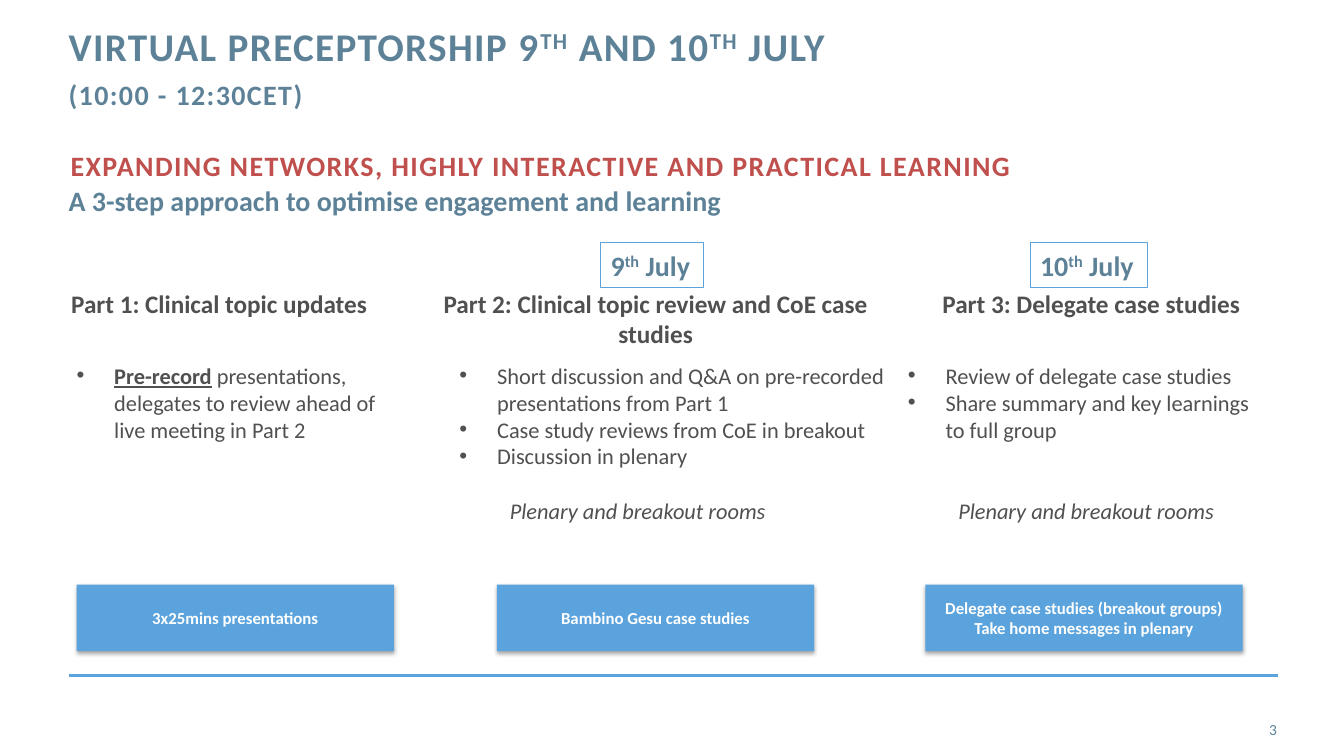
from dataclasses import dataclass

from lxml.etree import SubElement
from pptx import Presentation
from pptx.dml.color import RGBColor
from pptx.enum.shapes import MSO_CONNECTOR, MSO_SHAPE
from pptx.enum.text import MSO_ANCHOR, MSO_AUTO_SIZE, PP_ALIGN
from pptx.oxml.ns import qn
from pptx.util import Cm, Pt


@dataclass(frozen=True)
class Theme:
    font: str = "Calibri"
    slate: str = "5D8298"
    red: str = "C0504D"
    blue: str = "5BA3DD"
    grey: str = "505050"
    white: str = "FFFFFF"
    title: int = 28
    heading: int = 20
    subheading: int = 18
    body: int = 16
    label: int = 12
    number: int = 11


class SlideBuilder:
    def __init__(self, slide, theme):
        self.slide = slide
        self.theme = theme

    def add_run(self, paragraph, text, size, color, bold=False, italic=False,
                underline=False, superscript=False, spaced=False):
        run = paragraph.add_run()
        run.text = text
        font = run.font
        font.name, font.size = self.theme.font, Pt(size)
        font.bold, font.italic, font.underline = bold, italic, underline
        font.color.rgb = RGBColor.from_string(color)
        properties = run._r.get_or_add_rPr()
        if superscript:
            properties.set("baseline", "30000")
        if spaced:
            properties.set("spc", "100")

    def frame(self, shape, inset=True, anchor=MSO_ANCHOR.TOP, wrap=True):
        text_frame = shape.text_frame
        text_frame.word_wrap = wrap
        text_frame.auto_size = MSO_AUTO_SIZE.NONE
        text_frame.vertical_anchor = anchor
        text_frame.margin_left = text_frame.margin_right = Cm(0.25 if inset else 0)
        text_frame.margin_top = text_frame.margin_bottom = Cm(0.13 if inset else 0)
        return text_frame

    def title(self, left, top, width, height, pieces, subtitle):
        shape = self.slide.shapes.title
        shape.left, shape.top = Cm(left), Cm(top)
        shape.width, shape.height = Cm(width), Cm(height)
        paragraph = self.frame(shape, inset=False).paragraphs[0]
        paragraph.alignment = PP_ALIGN.LEFT
        paragraph.line_spacing = Pt(30)
        style = dict(color=self.theme.slate, bold=True, spaced=True)
        for text, superscript in pieces:
            self.add_run(paragraph, text, self.theme.title, superscript=superscript, **style)
        paragraph.add_line_break()
        self.add_run(paragraph, subtitle, self.theme.heading, **style)

    def text(self, left, top, width, height, text, size, color,
             align=PP_ALIGN.LEFT, inset=True, anchor=MSO_ANCHOR.TOP, **style):
        box = self.slide.shapes.add_textbox(Cm(left), Cm(top), Cm(width), Cm(height))
        paragraph = self.frame(box, inset, anchor).paragraphs[0]
        paragraph.alignment = align
        self.add_run(paragraph, text, size, color, **style)

    def indent(self, paragraph, margin, first=0):
        properties = paragraph._p.get_or_add_pPr()
        properties.set("marL", str(Cm(margin)))
        properties.set("indent", str(Cm(first)))
        return properties

    def bullets(self, left, top, width, height, items, note="", gap=0):
        box = self.slide.shapes.add_textbox(Cm(left), Cm(top), Cm(width), Cm(height))
        text_frame = self.frame(box)
        base = dict(size=self.theme.body, color=self.theme.grey)
        for index, runs in enumerate(items):
            paragraph = text_frame.add_paragraph() if index else text_frame.paragraphs[0]
            properties = self.indent(paragraph, 0.95, -0.95)
            SubElement(properties, qn("a:buFont")).set("typeface", "Arial")
            SubElement(properties, qn("a:buChar")).set("char", "•")
            for text, style in runs:
                self.add_run(paragraph, text, **base, **style)
        if note:
            paragraph = text_frame.add_paragraph()
            self.indent(paragraph, 1.27)
            paragraph.space_before = Pt(gap)
            self.add_run(paragraph, note, italic=True, **base)

    def date(self, left, top, width, height, day):
        box = self.slide.shapes.add_textbox(Cm(left), Cm(top), Cm(width), Cm(height))
        box.line.color.rgb = RGBColor.from_string(self.theme.blue)
        box.line.width = Pt(0.75)
        paragraph = self.frame(box, wrap=False).paragraphs[0]
        for text in (day, "th", " July"):
            self.add_run(paragraph, text, self.theme.heading, self.theme.slate,
                         bold=True, superscript=text == "th")

    def button(self, left, top, width, height, lines):
        shape = self.slide.shapes.add_shape(
            MSO_SHAPE.RECTANGLE, Cm(left), Cm(top), Cm(width), Cm(height))
        shape.fill.solid()
        shape.fill.fore_color.rgb = RGBColor.from_string(self.theme.blue)
        shape.line.fill.background()
        shape.shadow.inherit = False
        effects = shape._element.spPr.find(qn("a:effectLst"))
        shadow = SubElement(effects, qn("a:outerShdw"), blurRad=str(Pt(3.1)),
                            dist=str(Pt(1.8)), dir="5400000", rotWithShape="0")
        color = SubElement(shadow, qn("a:srgbClr"), val="000000")
        SubElement(color, qn("a:alpha"), val="35000")
        text_frame = self.frame(shape, anchor=MSO_ANCHOR.MIDDLE)
        for index, line in enumerate(lines):
            paragraph = text_frame.add_paragraph() if index else text_frame.paragraphs[0]
            paragraph.alignment = PP_ALIGN.CENTER
            self.add_run(paragraph, line, self.theme.label, self.theme.white, bold=True)

    def rule(self, left, right, top):
        line = self.slide.shapes.add_connector(
            MSO_CONNECTOR.STRAIGHT, Cm(left), Cm(top), Cm(right), Cm(top))
        line.line.color.rgb = RGBColor.from_string(self.theme.blue)
        line.line.width = Pt(2)
        SubElement(line._element.spPr, qn("a:effectLst"))


def main():
    presentation = Presentation()
    presentation.slide_width, presentation.slide_height = Cm(33.87), Cm(19.05)
    slide = presentation.slides.add_slide(presentation.slide_layouts[5])
    theme = Theme()
    builder = SlideBuilder(slide, theme)

    builder.rule(1.73, 32.21, 17.02)
    builder.title(1.73, 0.69, 28.27, 2.24, [
        ("VIRTUAL PRECEPTORSHIP 9", False), ("TH", True),
        (" AND 10", False), ("TH", True), (" JULY", False),
    ], "(10:00 - 12:30CET)")
    builder.text(1.78, 3.73, 27.38, 0.9,
                 "EXPANDING NETWORKS, HIGHLY INTERACTIVE AND PRACTICAL LEARNING",
                 theme.heading, theme.red, inset=False, bold=True, spaced=True)
    builder.text(1.73, 4.62, 29.77, 0.9,
                 "A 3-step approach to optimise engagement and learning",
                 theme.heading, theme.slate, inset=False, bold=True)

    for left, width, text, align in (
        (0.5, 10.05, "Part 1: Clinical topic updates", PP_ALIGN.CENTER),
        (10.9, 11.25, "Part 2: Clinical topic review and CoE case studies", PP_ALIGN.CENTER),
        (23.5, 10.2, "Part 3: Delegate case studies", PP_ALIGN.LEFT),
    ):
        builder.text(left, 7.14, width, 1.8, text, theme.subheading, theme.grey, align, bold=True)

    plenary = "Plenary and breakout rooms"
    blank_line = 19.5
    for left, width, items, note, blanks in (
        (1.68, 8.74, [[
            ("Pre-record", dict(bold=True, underline=True)),
            (" presentations, delegates to review ahead of live meeting in Part 2", {}),
        ]], "", 0),
        (11.33, 11.61, [
            [("Short discussion and Q&A on pre-recorded presentations from Part 1", {})],
            [("Case study reviews from CoE in breakout", {})],
            [("Discussion in plenary", {})],
        ], plenary, 1),
        (22.63, 9.45, [
            [("Review of delegate case studies", {})],
            [("Share summary and key learnings to full group", {})],
        ], plenary, 2),
    ):
        builder.bullets(left, 8.99, width, 4.95, items, note, blanks * blank_line)

    for left, lines in (
        (1.93, ["3x25mins presentations"]),
        (12.52, ["Bambino Gesu case studies"]),
        (23.32, ["Delegate case studies (breakout groups)", "Take home messages in plenary"]),
    ):
        builder.button(left, 14.73, 8, 1.68, lines)

    for left, width, day in ((15.14, 2.59, "9"), (25.96, 2.95, "10")):
        builder.date(left, 6.12, width, 1.12, day)

    builder.text(30, 17.86, 2.18, 1.02, "3", theme.number, theme.slate,
                 PP_ALIGN.RIGHT, inset=False, anchor=MSO_ANCHOR.MIDDLE)
    presentation.save("out.pptx")


if __name__ == "__main__":
    main()
